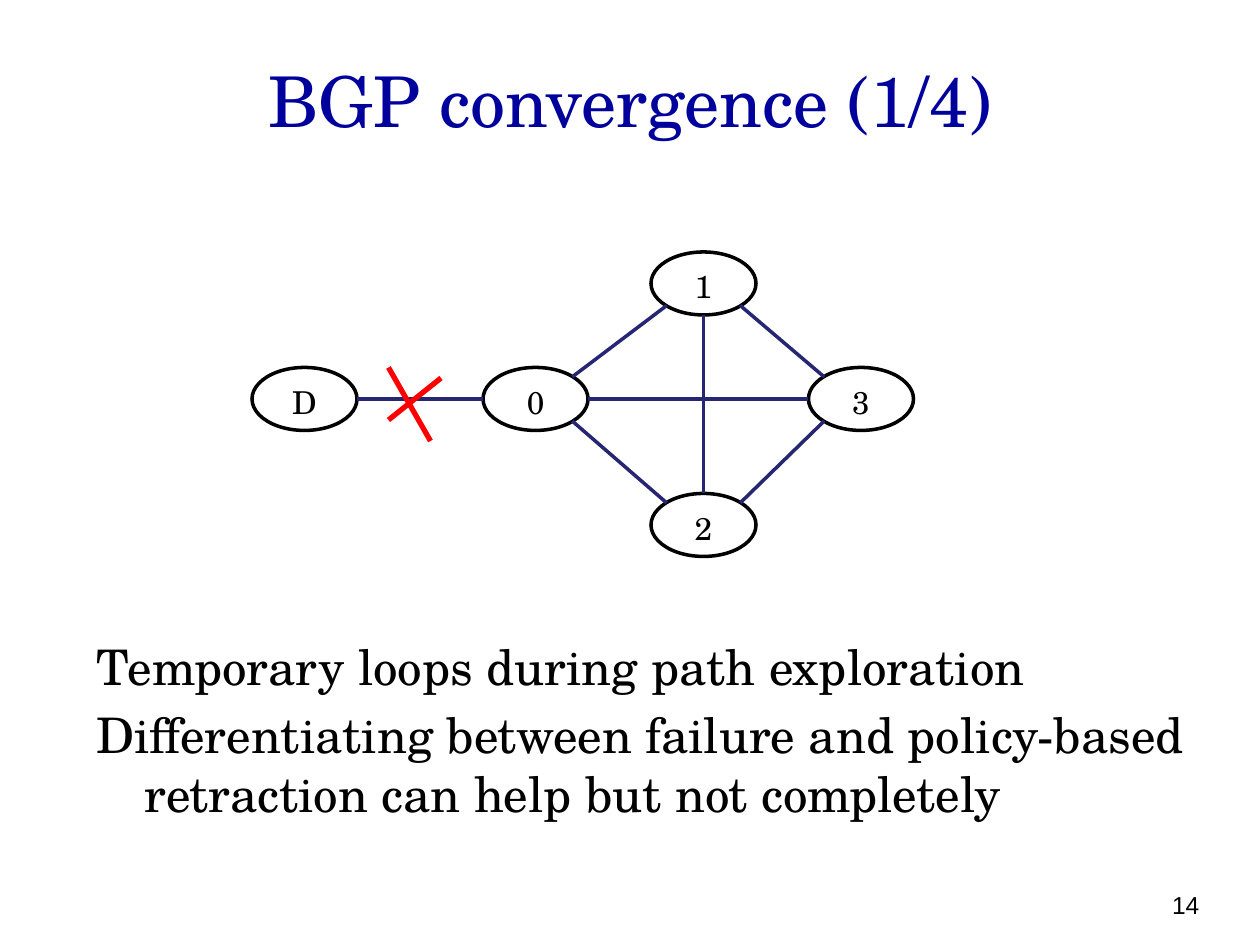
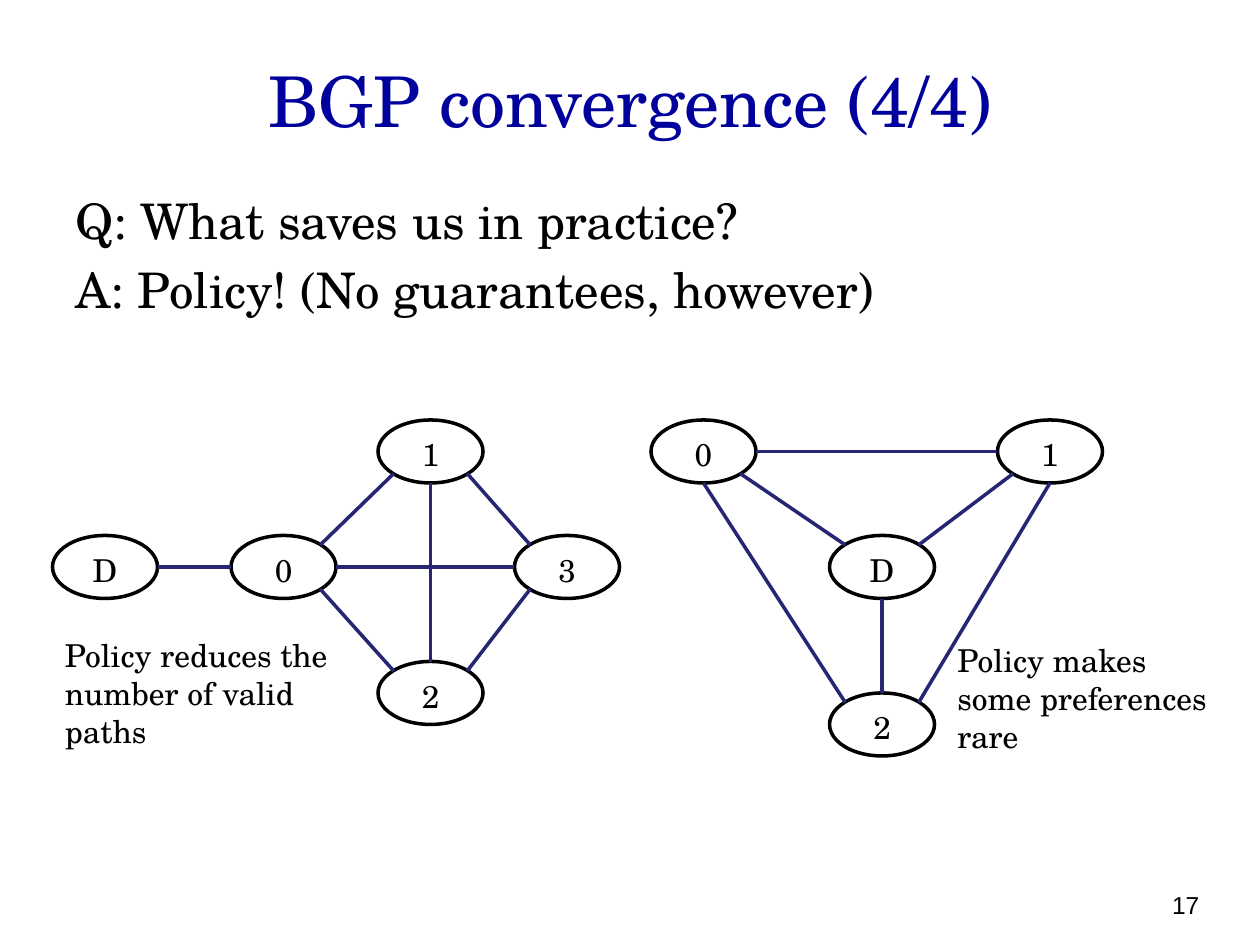
from dataclasses import dataclass
from enum import Enum
from math import sqrt

import pptx
import pptx.dml.color
import pptx.enum.shapes
import pptx.enum.text
import pptx.oxml.ns
import pptx.shapes.autoshape
import pptx.slide
import pptx.text.text
import pptx.util
from lxml import etree

Align = pptx.enum.text.PP_ALIGN
Anchor = pptx.enum.text.MSO_ANCHOR
EMU_PER_PX = 7620  # 120 px to the inch
NODE_W, NODE_H = 100, 60


@dataclass(frozen=True)
class Theme:
    serif: str = "TeX Gyre Schola"
    sans: str = "Arial"
    title_color: str = "00009C"
    ink: str = "000000"
    link_color: str = "262673"
    failure_color: str = "FF0000"
    title_size: int = 40
    body_size: int = 28
    label_size: int = 18
    number_size: int = 14
    line_width: int = 2
    failure_width: int = 3


THEME = Theme()


@dataclass(frozen=True)
class Box:
    left: int
    top: int
    width: int
    height: int


@dataclass(frozen=True)
class TextStyle:
    size: int
    color: str = THEME.ink
    font: str = THEME.serif
    align: Align = Align.LEFT
    anchor: Anchor = Anchor.TOP
    hanging: int = 0
    space_after: float = 0


TITLE = TextStyle(THEME.title_size, THEME.title_color,
                  align=Align.CENTER, anchor=Anchor.MIDDLE)
BODY = TextStyle(THEME.body_size, hanging=46, space_after=5.6)
NOTE = TextStyle(THEME.label_size)
NODE_LABEL = TextStyle(THEME.label_size, align=Align.CENTER)
NUMBER = TextStyle(THEME.number_size, font=THEME.sans,
                   align=Align.RIGHT, anchor=Anchor.BOTTOM)

TITLE_BOX = Box(60, 38, 1080, 114)
NUMBER_BOX = Box(874, 820, 280, 62)


class Site(Enum):
    """Direction from a node's centre to a point on its rim."""
    N = (0, -1)
    NE = (1, -1)
    E = (1, 0)
    SE = (1, 1)
    S = (0, 1)
    SW = (-1, 1)
    W = (-1, 0)
    NW = (-1, -1)


@dataclass(frozen=True)
class Point:
    x: int
    y: int


@dataclass(frozen=True)
class Link:
    source: str
    leaves: Site
    target: str
    enters: Site


@dataclass(frozen=True)
class Network:
    nodes: dict[str, Point]  # top left corner of each node
    links: list[Link]


@dataclass(frozen=True)
class Note:
    text: str
    box: Box


@dataclass(frozen=True)
class Page:
    number: int
    title: str
    body: list[str]
    body_box: Box
    networks: list[Network]
    notes: list[Note]
    failure: list[tuple[Point, Point]]


# Content
MESH_LINKS = [
    Link("0", Site.W, "D", Site.E),
    Link("0", Site.SE, "2", Site.NW),
    Link("1", Site.SW, "0", Site.NE),
    Link("0", Site.E, "3", Site.W),
    Link("1", Site.SE, "3", Site.NW),
    Link("3", Site.SW, "2", Site.NE),
    Link("1", Site.S, "2", Site.N),
]
TRIANGLE_LINKS = [
    Link("0", Site.SE, "D", Site.NW),
    Link("1", Site.SW, "D", Site.NE),
    Link("2", Site.N, "D", Site.S),
    Link("0", Site.S, "2", Site.NW),
    Link("1", Site.S, "2", Site.NE),
    Link("0", Site.E, "1", Site.W),
]


def mesh(top: int, d_x: int, zero_x: int, middle_x: int, three_x: int) -> Network:
    row = top + 110
    return Network({"1": Point(middle_x, top), "0": Point(zero_x, row),
                    "2": Point(middle_x, top + 230), "D": Point(d_x, row),
                    "3": Point(three_x, row)}, MESH_LINKS)


PAGES = [
    Page(14, "BGP convergence (1/4)",
         ["Temporary loops during path exploration",
          "Differentiating between failure and policy-based retraction "
          "can help but not completely"],
         Box(80, 600, 1070, 210),
         [mesh(240, 240, 460, 620, 770)],
         [],
         [(Point(370, 350), Point(410, 420)), (Point(370, 400), Point(420, 360))]),
    Page(17, "BGP convergence (4/4)",
         ["Q: What saves us in practice?", "A: Policy! (No guarantees, however)"],
         Box(60, 176, 1080, 154),
         [mesh(400, 50, 220, 360, 490),
          Network({"0": Point(620, 400), "1": Point(950, 400),
                   "2": Point(790, 660), "D": Point(790, 510)}, TRIANGLE_LINKS)],
         [Note("Policy reduces the number of valid paths", Box(50, 600, 320, 85)),
          Note("Policy makes some preferences rare", Box(900, 605, 280, 85))],
         []),
]


# Drawing helpers
def px(length: float) -> pptx.util.Emu:
    return pptx.util.Emu(round(length * EMU_PER_PX))


def rgb(color: str) -> pptx.dml.color.RGBColor:
    return pptx.dml.color.RGBColor.from_string(color)


def place(box: Box) -> list[pptx.util.Emu]:
    return [px(side) for side in (box.left, box.top, box.width, box.height)]


def write(frame: pptx.text.text.TextFrame, lines: list[str], style: TextStyle) -> None:
    frame.word_wrap = True
    frame.vertical_anchor = style.anchor
    frame.text = "\n".join(lines)
    for paragraph in frame.paragraphs:
        paragraph.alignment = style.align
        paragraph.space_after = pptx.util.Pt(style.space_after)
        paragraph.font.name = style.font
        paragraph.font.size = pptx.util.Pt(style.size)
        paragraph.font.color.rgb = rgb(style.color)
        if style.hanging:
            properties = paragraph._p.get_or_add_pPr()
            properties.set("marL", str(px(style.hanging)))
            properties.set("indent", str(px(-style.hanging)))


def add_text(slide: pptx.slide.Slide, box: Box, lines: list[str],
             style: TextStyle) -> None:
    write(slide.shapes.add_textbox(*place(box)).text_frame, lines, style)


def add_line(slide: pptx.slide.Slide, start: Point, end: Point,
             color: str, width: int) -> None:
    line = slide.shapes.add_connector(
        pptx.enum.shapes.MSO_CONNECTOR.STRAIGHT,
        px(start.x), px(start.y), px(end.x), px(end.y))
    line.line.color.rgb = rgb(color)
    line.line.width = pptx.util.Pt(width)
    etree.SubElement(line._element.spPr, pptx.oxml.ns.qn("a:effectLst"))


def add_node(slide: pptx.slide.Slide, label: str, corner: Point) -> None:
    node = slide.shapes.add_shape(pptx.enum.shapes.MSO_SHAPE.OVAL,
                                  *place(Box(corner.x, corner.y, NODE_W, NODE_H)))
    node.shadow.inherit = False
    node.fill.background()
    node.line.color.rgb = rgb(THEME.ink)
    node.line.width = pptx.util.Pt(THEME.line_width)
    write(node.text_frame, [label], NODE_LABEL)


def rim_point(corner: Point, site: Site) -> Point:
    dx, dy = site.value
    reach = 1 / sqrt(dx * dx + dy * dy)
    return Point(round(corner.x + NODE_W / 2 * (1 + dx * reach)),
                 round(corner.y + NODE_H / 2 * (1 + dy * reach)))


def add_network(slide: pptx.slide.Slide, network: Network) -> None:
    for label, corner in network.nodes.items():
        add_node(slide, label, corner)
    for link in network.links:
        add_line(slide, rim_point(network.nodes[link.source], link.leaves),
                 rim_point(network.nodes[link.target], link.enters),
                 THEME.link_color, THEME.line_width)


def add_page(deck, page: Page) -> None:
    slide = deck.slides.add_slide(deck.slide_layouts[6])
    add_text(slide, TITLE_BOX, [page.title], TITLE)
    add_text(slide, page.body_box, page.body, BODY)
    add_text(slide, NUMBER_BOX, [str(page.number)], NUMBER)
    for network in page.networks:
        add_network(slide, network)
    for start, end in page.failure:
        add_line(slide, start, end, THEME.failure_color, THEME.failure_width)
    for note in page.notes:
        add_text(slide, note.box, [note.text], NOTE)


def main() -> None:
    deck = pptx.Presentation()
    deck.slide_width, deck.slide_height = px(1200), px(900)
    for page in PAGES:
        add_page(deck, page)
    deck.save("out.pptx")


if __name__ == "__main__":
    main()
